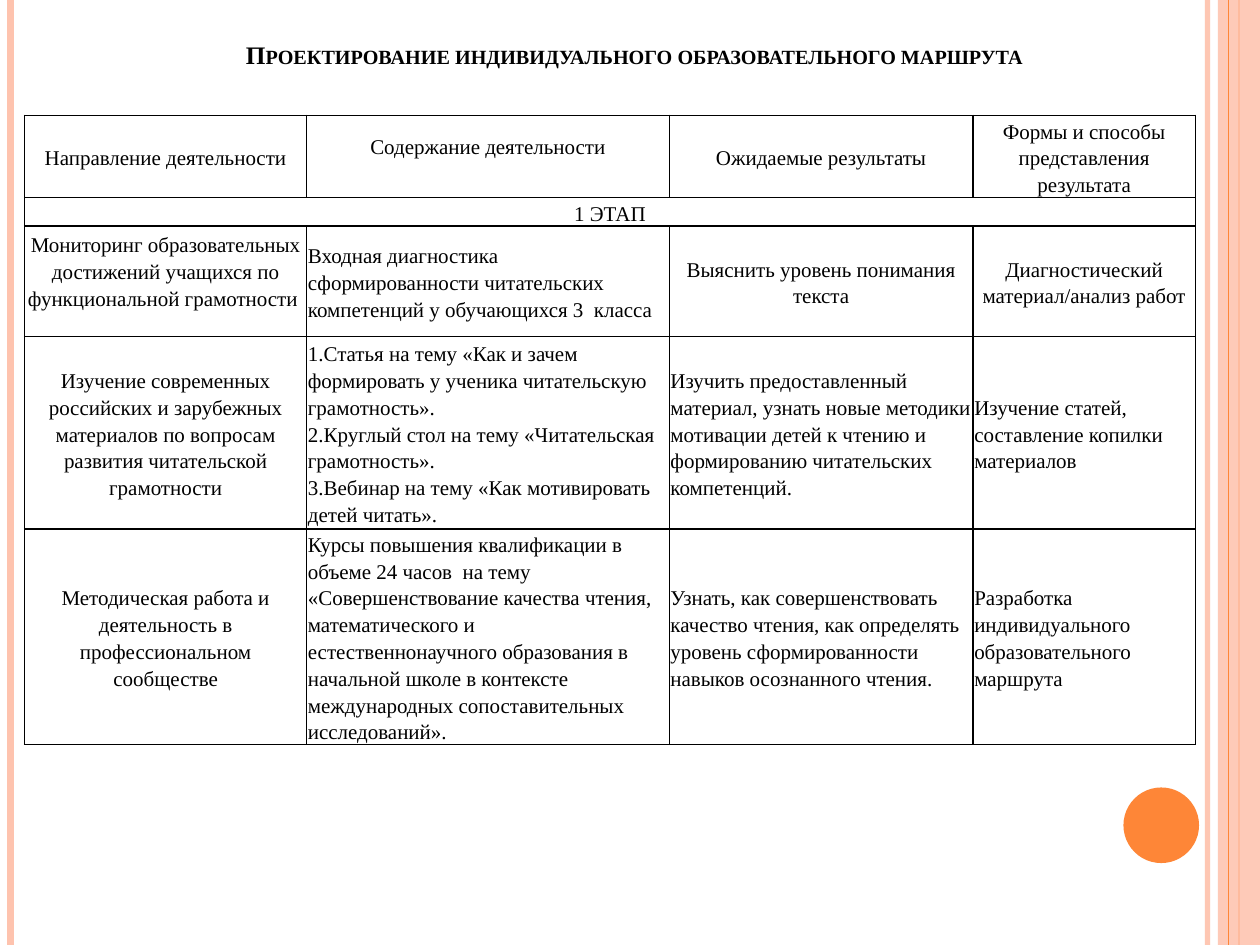
from dataclasses import dataclass

from pptx import Presentation
from pptx.dml.color import RGBColor as Rgb
from pptx.enum.shapes import MSO_CONNECTOR as Conn, MSO_SHAPE as Form
from pptx.enum.text import MSO_ANCHOR as Anchor, PP_ALIGN as Align
from pptx.oxml.ns import qn
from pptx.oxml.xmlchemy import OxmlElement as Node
from pptx.util import Pt


@dataclass(frozen=True)
class Theme:
    face: str = "Times New Roman"
    ink: str = "000000"
    pale: str = "FEC3AE"
    warm: str = "FE8637"
    head: float = 14.4
    body: float = 12


def sub(node, tag, **attrs):
    """Append a child element with the given attributes."""
    kid = Node(tag)
    for key, val in attrs.items():
        kid.set(key, str(val))
    node.append(kid)
    return kid


def fade(node, share):
    """Set the opacity, in percent, of the first colour in a node."""
    sub(next(node.iter(qn("a:srgbClr"))), "a:alpha", val=share * 1000)


class Page:
    def __init__(self, slide, theme):
        self.slide, self.theme = slide, theme
        self.shapes = slide.shapes

    def rule(self, x, color, width, share=100):
        """Draw a vertical line down the whole slide."""
        line = self.shapes.add_connector(Conn.STRAIGHT, Pt(x), 0, Pt(x), Pt(540))
        line.line.color.rgb = Rgb.from_string(color)
        line.line.width = Pt(width)
        props = line._element.spPr
        if share < 100:
            fade(props, share)
        sub(props, "a:effectLst")

    def shape(self, form, box, color, share=100):
        item = self.shapes.add_shape(form, *map(Pt, box))
        item.fill.solid()
        item.fill.fore_color.rgb = Rgb.from_string(color)
        if share < 100:
            fade(item._element.spPr, share)
        item.line.fill.background()
        item.shadow.inherit = False

    def style(self, para, size, align, space, bold=False):
        para.alignment, para.line_spacing = align, space
        font = para.font
        font.name, font.size, font.bold = self.theme.face, Pt(size), bold
        font.color.rgb = Rgb.from_string(self.theme.ink)

    def title(self, text, box):
        item = self.shapes.title
        item.left, item.top, item.width, item.height = map(Pt, box)
        frame = item.text_frame
        frame.text, frame.vertical_anchor = text, Anchor.BOTTOM
        para = frame.paragraphs[0]
        self.style(para, self.theme.head, Align.CENTER, 1.5, True)
        para.runs[0].font._element.set("cap", "small")
        # Lay the title over the side bars
        self.shapes._spTree.append(item._element)

    def cell(self, cell, text, align, foot=0):
        cell.margin_left = cell.margin_right = cell.margin_top = Pt(0.7)
        cell.margin_bottom = Pt(foot)
        cell.vertical_anchor = Anchor.MIDDLE
        cell.text = text
        for para in cell.text_frame.paragraphs:
            self.style(para, self.theme.body, align, 1.15)
        # Borders come before the fill in the cell's properties
        props = cell._tc.get_or_add_tcPr()
        for side in ("a:lnL", "a:lnR", "a:lnT", "a:lnB"):
            edge = sub(props, side, w=Pt(1))
            sub(sub(edge, "a:solidFill"), "a:srgbClr", val=self.theme.ink)
        cell.fill.background()

    def table(self, spot, cols, rows, data, left, feet):
        """Fill a grid; left holds left-aligned cells, feet bottom insets."""
        grid = self.shapes.add_table(
            len(rows), len(cols), *map(Pt, (*spot, sum(cols), sum(rows)))).table
        grid.first_row = grid.horz_banding = False
        for col, width in zip(grid.columns, cols):
            col.width = Pt(width)
        for row, height in zip(grid.rows, rows):
            row.height = Pt(height)
        for r, texts in enumerate(data):
            if len(texts) == 1:
                grid.cell(r, 0).merge(grid.cell(r, len(cols) - 1))
            for c in range(len(cols)):
                text = texts[c] if c < len(texts) else ""
                align = Align.LEFT if (r, c) in left else Align.CENTER
                self.cell(grid.cell(r, c), text, align, feet.get((r, c), 0))


DATA = [
    ["Направление деятельности", "Содержание деятельности",
     "Ожидаемые результаты", "Формы и способы представления результата"],
    ["1 ЭТАП"],
    ["Мониторинг образовательных достижений учащихся по функциональной "
     "грамотности ",
     "Входная диагностика сформированности читательских компетенций "
     "у обучающихся 3  класса",
     "Выяснить уровень понимания текста",
     "Диагностический материал/анализ работ"],
    ["Изучение современных российских и зарубежных материалов по вопросам "
     "развития читательской грамотности",
     "1.Статья на тему «Как и зачем формировать у ученика читательскую "
     "грамотность».\n"
     "2.Круглый стол на тему «Читательская грамотность».\n"
     "3.Вебинар на тему «Как мотивировать детей читать».",
     "Изучить предоставленный материал, узнать новые методики мотивации "
     "детей к чтению и формированию читательских компетенций.",
     "Изучение статей, составление копилки материалов"],
    ["Методическая работа и деятельность в профессиональном сообществе",
     "Курсы повышения квалификации в объеме 24 часов  на тему "
     "«Совершенствование качества чтения, математического и "
     "естественнонаучного образования в начальной школе в контексте "
     "международных сопоставительных исследований».",
     "Узнать, как совершенствовать качество чтения, как определять уровень "
     "сформированности навыков осознанного чтения.",
     "Разработка индивидуального образовательного маршрута"],
]


def main():
    deck = Presentation()
    deck.slide_width, deck.slide_height = Pt(720), Pt(540)
    look = Theme()
    page = Page(deck.slides.add_slide(deck.slide_layouts[5]), look)

    # Side bars and disc
    page.rule(690, look.pale, 3, 93)
    page.rule(6, look.pale, 4.5)
    page.rule(708, look.warm, 1.5)
    page.shape(Form.RECTANGLE, (696, 0, 24, 540), look.pale, 87)
    page.rule(702, look.warm, 0.75)
    page.shape(Form.OVAL, (642, 450, 43.2, 43.2), look.warm)

    # Heading
    page.title("Проектирование индивидуального образовательного маршрута",
               (36, 21.6, 653, 21.6))

    # Route table
    left = {(2, 1)} | {(r, c) for r in (3, 4) for c in (1, 2, 3)}
    page.table((14.1, 66), (161.2, 207.2, 173.6, 127),
               (46.8, 16.3, 63.2, 110, 123.2), DATA, left,
               {(0, 1): 13, (2, 0): 13})

    deck.save("out.pptx")


if __name__ == "__main__":
    main()
